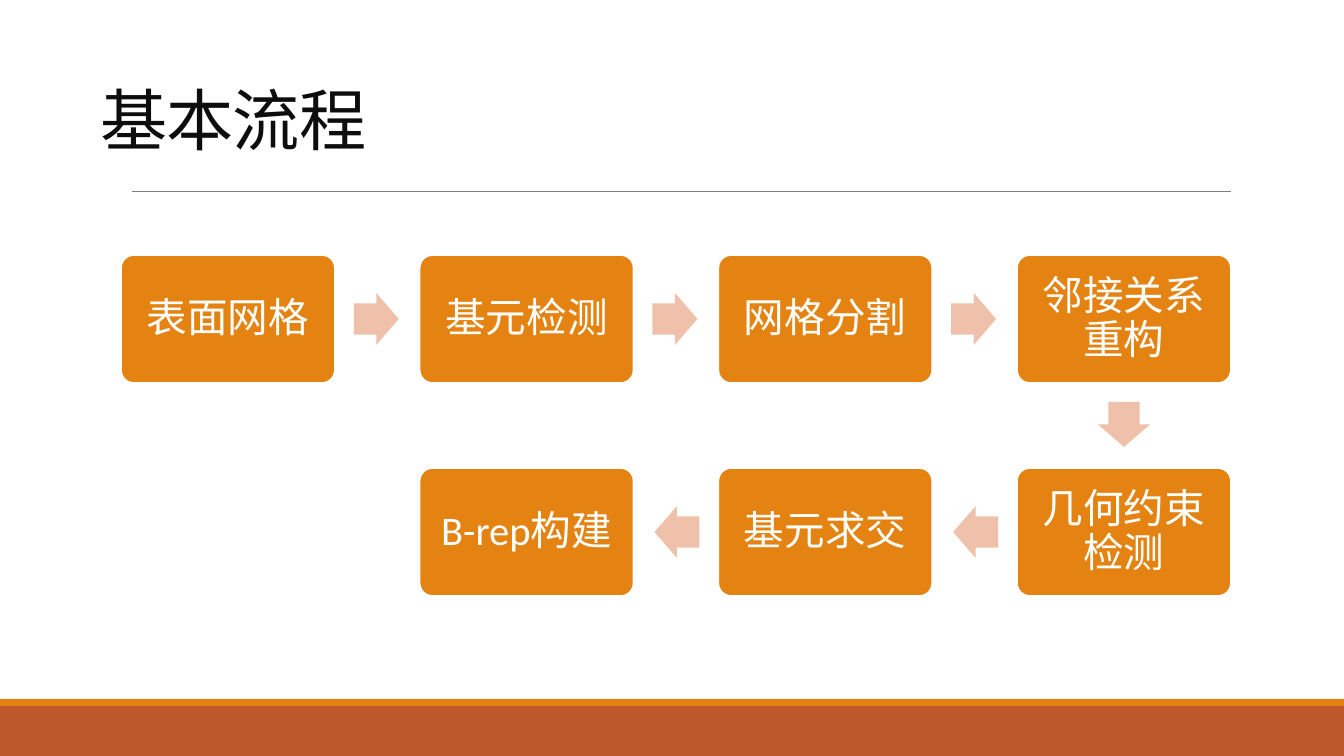
import pptx
import pptx.util
import pptx.dml.color
import pptx.enum.shapes
import pptx.enum.text
import pptx.oxml.ns
from lxml import etree

RGBColor = pptx.dml.color.RGBColor
MSO_SHAPE = pptx.enum.shapes.MSO_SHAPE
ANCHOR = pptx.enum.text.MSO_ANCHOR
ALIGN = pptx.enum.text.PP_ALIGN
Pt = pptx.util.Pt

ORANGE = RGBColor(0xE4, 0x83, 0x12)
RUST = RGBColor(0xBD, 0x58, 0x2C)
PEACH = RGBColor(0xEF, 0xC1, 0xAB)
GRAY = RGBColor(0x80, 0x80, 0x80)
INK = RGBColor(0x0D, 0x0D, 0x0D)
WHITE = RGBColor(0xFF, 0xFF, 0xFF)

CJK_FONT = "Noto Sans CJK SC"
SLIDE_WIDTH, SLIDE_HEIGHT = 1344, 756
BOX_WIDTH, BOX_HEIGHT = 214, 128
ARROW_WIDTH, ARROW_HEIGHT = 45, 52
COLUMNS = 4
# Each step: text, column, row, in order of flow
STEPS = [
    ("表面网格", 0, 0), ("基元检测", 1, 0), ("网格分割", 2, 0), ("邻接关系重构", 3, 0),
    ("几何约束检测", 3, 1), ("基元求交", 2, 1), ("B-rep构建", 1, 1),
]


def px(length):
    return round(length * 914400 / 100.8)


def write_text(shape, text, *, size, color, font="Calibri", align=ALIGN.LEFT,
               anchor=ANCHOR.MIDDLE, line_spacing=0.9, inset=(10, 5), tracking=None):
    frame = shape.text_frame
    frame.word_wrap = True
    frame.vertical_anchor = anchor
    frame.margin_left = frame.margin_right = px(inset[0])
    frame.margin_top = frame.margin_bottom = px(inset[1])
    paragraph = frame.paragraphs[0]
    paragraph.alignment = align
    paragraph.line_spacing = line_spacing
    run = paragraph.add_run()
    run.text = text
    run.font.size = Pt(size)
    run.font.name = font
    run.font.color.rgb = color
    properties = run.font._element
    east_asian = etree.Element(pptx.oxml.ns.qn("a:ea"), typeface=CJK_FONT)
    properties.find(pptx.oxml.ns.qn("a:latin")).addnext(east_asian)
    if tracking is not None:
        properties.set("spc", str(tracking))


def add_filled_shape(slide, kind, left, top, width, height, fill, adjustments=()):
    shape = slide.shapes.add_shape(kind, px(left), px(top), px(width), px(height))
    shape.shadow.inherit = False
    shape.fill.solid()
    shape.fill.fore_color.rgb = fill
    shape.line.fill.background()
    for index, value in enumerate(adjustments):
        shape.adjustments[index] = value
    return shape


def add_footer(slide, left, top, width, height):
    stripe = 7
    add_filled_shape(slide, MSO_SHAPE.RECTANGLE, left, top + stripe, width, height - stripe, RUST)
    add_filled_shape(slide, MSO_SHAPE.RECTANGLE, left, top, width, stripe, ORANGE)


def add_title(slide, left, top, width, height):
    """Place the heading and the rule below it."""
    rule_left, rule_right, rule_top = left + 42, left + 1141, top + 140
    rule = slide.shapes.add_connector(
        pptx.enum.shapes.MSO_CONNECTOR.STRAIGHT,
        px(rule_left), px(rule_top), px(rule_right), px(rule_top))
    rule.line.color.rgb = GRAY
    rule.line.width = Pt(0.5)
    etree.SubElement(rule._element.spPr, pptx.oxml.ns.qn("a:effectLst"))
    title = slide.shapes.add_textbox(px(left), px(top), px(width), px(height))
    write_text(title, "基本流程", size=48, color=INK, font=CJK_FONT,
               anchor=ANCHOR.BOTTOM, line_spacing=0.85, tracking=-50)


def add_step(slide, text, left, top):
    box = add_filled_shape(slide, MSO_SHAPE.ROUNDED_RECTANGLE, left, top,
                           BOX_WIDTH, BOX_HEIGHT, ORANGE, [0.1])
    box.line.color.rgb = WHITE
    box.line.width = Pt(1.25)
    write_text(box, text, size=29, color=WHITE, align=ALIGN.CENTER, inset=(15, 15))


def add_flow_arrow(slide, center_x, center_y, rotation):
    arrow = add_filled_shape(slide, MSO_SHAPE.RIGHT_ARROW,
                             center_x - ARROW_WIDTH / 2, center_y - ARROW_HEIGHT / 2,
                             ARROW_WIDTH, ARROW_HEIGHT, PEACH, [0.6, 0.5])
    arrow.rotation = rotation


def add_flow(slide, left, top, width, height):
    """Place the steps on a grid, with an arrow midway between neighbours."""
    column_pitch = (width - BOX_WIDTH) / (COLUMNS - 1)
    row_pitch = height - BOX_HEIGHT
    rotations = {(1, 0): 0, (0, 1): 90, (-1, 0): 180}
    for index, (text, column, row) in enumerate(STEPS):
        box_left = left + column * column_pitch
        box_top = top + row * row_pitch
        add_step(slide, text, box_left, box_top)
        if index + 1 < len(STEPS):
            next_column, next_row = STEPS[index + 1][1:]
            across, down = next_column - column, next_row - row
            # Arrows sit one pixel nearer to the step they leave
            add_flow_arrow(slide,
                           box_left + BOX_WIDTH / 2 + across * (column_pitch / 2 - 1),
                           box_top + BOX_HEIGHT / 2 + down * (row_pitch / 2 - 1),
                           rotations[across, down])


def main():
    presentation = pptx.Presentation()
    presentation.slide_width = px(SLIDE_WIDTH)
    presentation.slide_height = px(SLIDE_HEIGHT)
    slide = presentation.slides.add_slide(presentation.slide_layouts[6])
    add_footer(slide, 0, 699, SLIDE_WIDTH, 57)
    add_title(slide, 90, 51, 1159, 113)
    add_flow(slide, 121, 255, 1110, 341)
    presentation.save("out.pptx")


if __name__ == "__main__":
    main()
